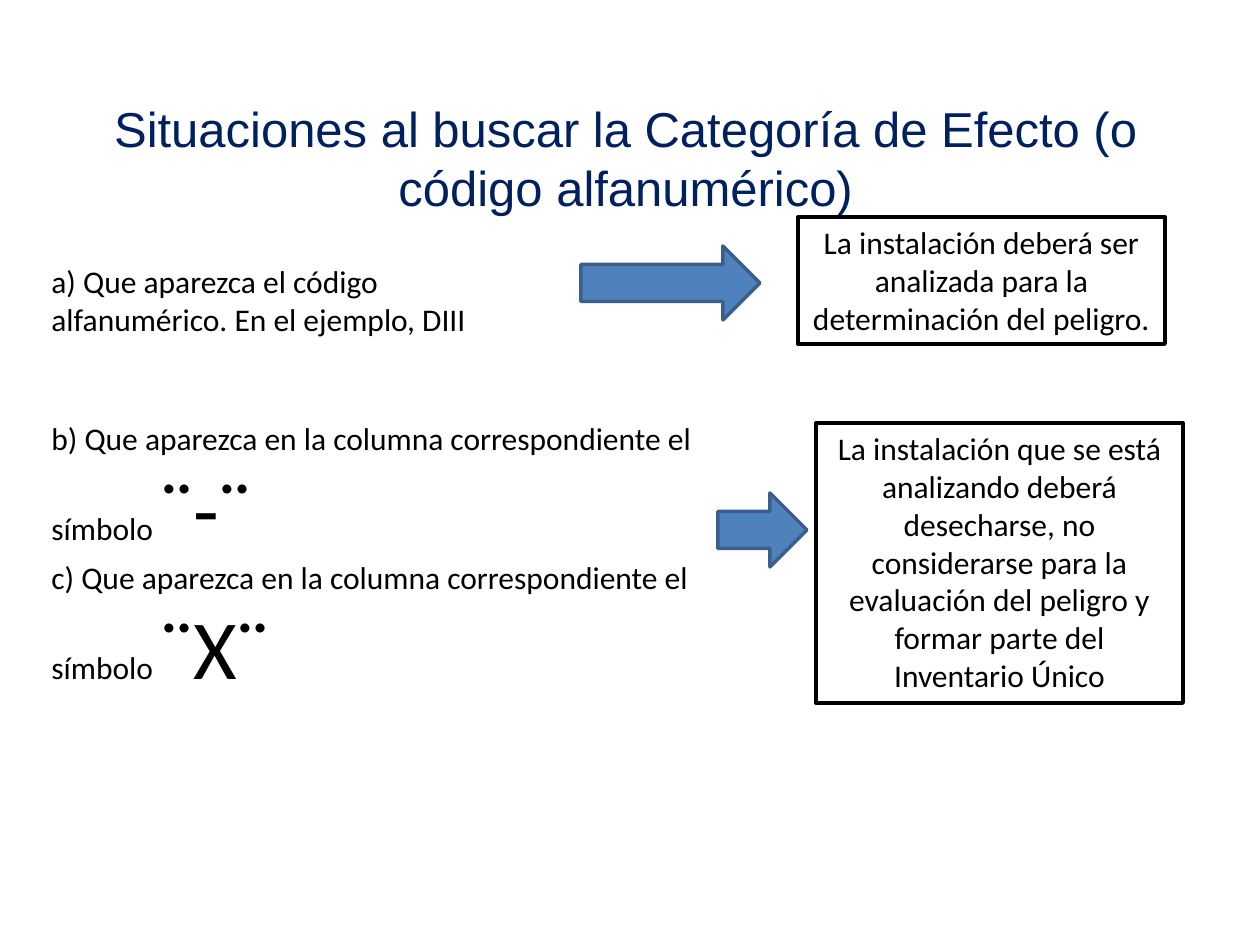
from pptx import Presentation
from pptx.dml.color import RGBColor
from pptx.enum.shapes import MSO_SHAPE
from pptx.enum.text import MSO_ANCHOR, MSO_AUTO_SIZE, PP_ALIGN
from pptx.util import Emu, Pt

NAVY = RGBColor(0x00, 0x20, 0x60)
BLACK = RGBColor(0x00, 0x00, 0x00)
BLUE = RGBColor(0x4F, 0x81, 0xBD)
DARK_BLUE = RGBColor(0x3A, 0x5F, 0x8C)
RECT, ARROW = MSO_SHAPE.RECTANGLE, MSO_SHAPE.RIGHT_ARROW
LEFT, CENTER = PP_ALIGN.LEFT, PP_ALIGN.CENTER
TOP, MIDDLE = MSO_ANCHOR.TOP, MSO_ANCHOR.MIDDLE
FIT, NO_FIT = MSO_AUTO_SIZE.SHAPE_TO_FIT_TEXT, MSO_AUTO_SIZE.NONE
PX_PER_INCH = 126
BODY_FONT, BODY_SIZE, SYMBOL_SIZE = "Calibri", 18, 48


def px(*lengths):
    return [Emu(round(n * 914400 / PX_PER_INCH)) for n in lengths]


class SlideBuilder:
    def __init__(self, slide):
        self.slide = slide

    def fill_text(self, sp, paragraphs, align=LEFT, font=BODY_FONT,
                  size=BODY_SIZE, color=BLACK, anchor=TOP, fit=FIT):
        """Each paragraph is a pair: body text and a large symbol."""
        tf = sp.text_frame
        tf.word_wrap = True
        tf.auto_size = fit
        tf.vertical_anchor = anchor
        for i, (text, symbol) in enumerate(paragraphs):
            p = tf.paragraphs[0] if i == 0 else tf.add_paragraph()
            p.alignment = align
            p.font.name, p.font.size = font, Pt(size)
            p.font.color.rgb = color
            p.add_run().text = text
            if symbol:
                r = p.add_run()
                r.text = symbol
                r.font.size = Pt(SYMBOL_SIZE)

    def text(self, box, paragraphs, **style):
        sp = self.slide.shapes.add_textbox(*px(*box))
        self.fill_text(sp, paragraphs, **style)

    def shape(self, kind, box, line, width):
        sp = self.slide.shapes.add_shape(kind, *px(*box))
        sp.shadow.inherit = False
        sp.line.color.rgb = line
        sp.line.width = Pt(width)
        return sp

    def arrow(self, box):
        sp = self.shape(ARROW, box, DARK_BLUE, 2)
        sp.fill.solid()
        sp.fill.fore_color.rgb = BLUE

    def outcome(self, box, text):
        sp = self.shape(RECT, box, BLACK, 2.25)
        sp.fill.background()
        self.fill_text(sp, [(text, "")], align=CENTER)


def main():
    prs = Presentation()
    prs.slide_width, prs.slide_height = px(1260, 945)
    s = SlideBuilder(prs.slides.add_slide(prs.slide_layouts[6]))

    # Title
    s.text((69, 88, 1113, 139),
           [("Situaciones al buscar la Categoría de Efecto "
             "(o código alfanumérico)", "")],
           align=CENTER, font="Arial", size=28, color=NAVY,
           anchor=MIDDLE, fit=NO_FIT)

    # Case a: the code appears
    s.text((39, 256, 522, 89),
           [("a) Que aparezca el código alfanumérico. "
             "En el ejemplo, DIII", "")])
    s.arrow((581, 246, 179, 74))
    s.outcome((798, 217, 367, 127),
              "La instalación deberá ser analizada para la "
              "determinación del peligro.")

    # Cases b and c: a symbol appears
    s.text((39, 413, 748, 301),
           [(f"{case}) Que aparezca en la columna correspondiente el símbolo ",
             f"¨{mark}¨") for case, mark in (("b", "-"), ("c", "X"))])
    s.arrow((718, 493, 89, 74))
    s.outcome((816, 423, 367, 280),
              "La instalación que se está analizando deberá desecharse, "
              "no considerarse para la evaluación del peligro y formar "
              "parte del Inventario Único")

    prs.save("out.pptx")


if __name__ == "__main__":
    main()
